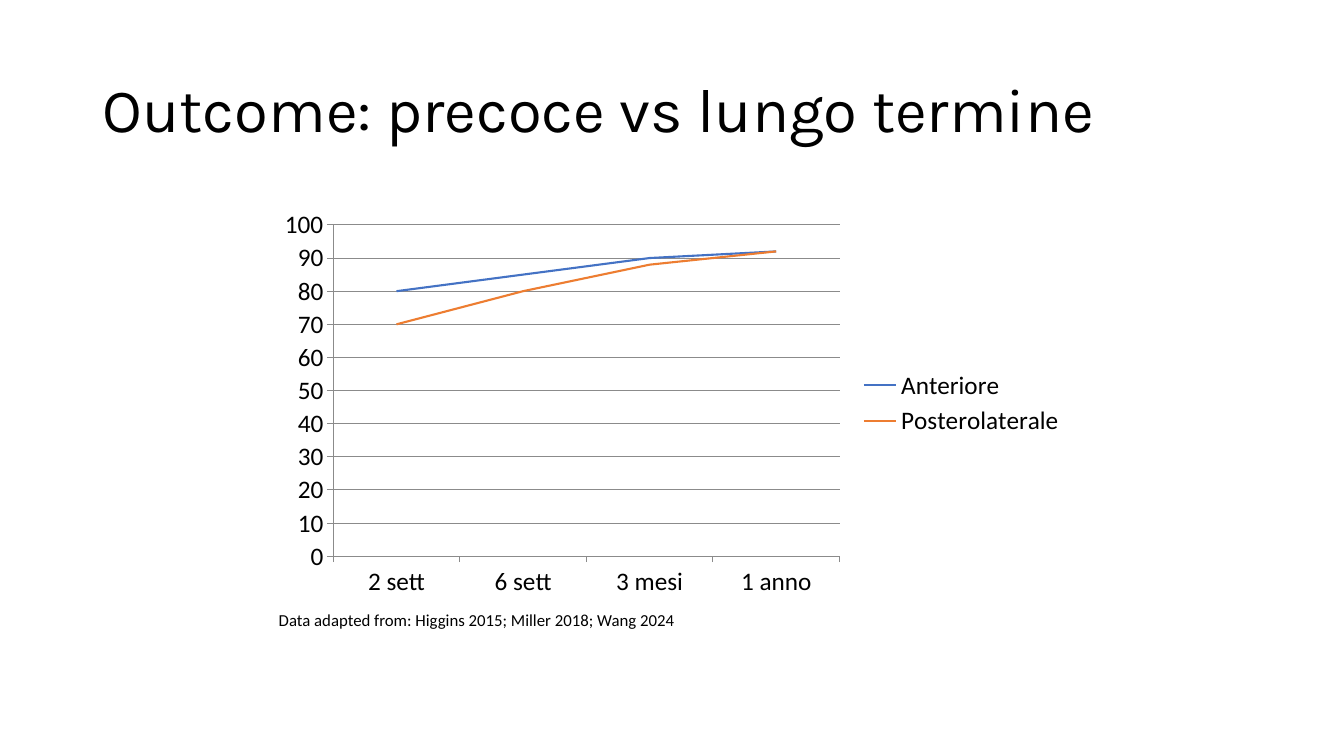
from pptx import Presentation
from pptx.chart.data import CategoryChartData
from pptx.dml.color import RGBColor
from pptx.enum.chart import XL_CHART_TYPE, XL_LEGEND_POSITION, XL_MARKER_STYLE, XL_TICK_MARK
from pptx.enum.text import MSO_ANCHOR, MSO_AUTO_SIZE, PP_ALIGN
from pptx.util import Inches, Pt

LINE_CHART = XL_CHART_TYPE.LINE
LEGEND_RIGHT = XL_LEGEND_POSITION.RIGHT
NO_MARKER = XL_MARKER_STYLE.NONE
TICK_OUTSIDE = XL_TICK_MARK.OUTSIDE
TICK_NONE = XL_TICK_MARK.NONE
MIDDLE = MSO_ANCHOR.MIDDLE
LEFT = PP_ALIGN.LEFT
FIT_SHAPE = MSO_AUTO_SIZE.SHAPE_TO_FIT_TEXT
NO_FIT = MSO_AUTO_SIZE.NONE

BLACK = RGBColor(0x00, 0x00, 0x00)
WHITE = RGBColor(0xFF, 0xFF, 0xFF)
GREY = RGBColor(0x8B, 0x8B, 0x8B)
BLUE = RGBColor(0x44, 0x72, 0xC4)
ORANGE = RGBColor(0xED, 0x7D, 0x31)

SLIDE_WIDTH, SLIDE_HEIGHT = Inches(13.33), Inches(7.5)

PERIODS = ("2 sett", "6 sett", "3 mesi", "1 anno")
APPROACHES = (
    ("Anteriore", (80, 85, 90, 92), BLUE),
    ("Posterolaterale", (70, 80, 88, 92), ORANGE),
)


def area(left, top, width, height):
    """Turn shares of the slide into lengths."""
    return (int(SLIDE_WIDTH * left), int(SLIDE_HEIGHT * top),
            int(SLIDE_WIDTH * width), int(SLIDE_HEIGHT * height))


def format_font(font, name, size):
    font.name = name
    font.size = Pt(size)
    font.bold = False
    font.color.rgb = BLACK


def write_text(frame, text, font_name, size, line_spacing=1.0):
    para = frame.paragraphs[0]
    para.alignment = LEFT
    para.line_spacing = line_spacing
    span = para.add_run()
    span.text = text
    format_font(span.font, font_name, size)


def set_title(page, text, place):
    title = page.shapes.title
    title.left, title.top, title.width, title.height = place
    frame = title.text_frame
    frame.word_wrap = True
    frame.auto_size = NO_FIT
    frame.vertical_anchor = MIDDLE
    write_text(frame, text, "Karla", 44, line_spacing=0.9)


def add_caption(page, text, place):
    frame = page.shapes.add_textbox(*place).text_frame
    frame.word_wrap = False
    frame.auto_size = FIT_SHAPE
    write_text(frame, text, "Calibri", 12)


def format_line(line, color, width):
    line.color.rgb = color
    line.width = Pt(width)


def add_outcome_chart(page, place):
    data = CategoryChartData()
    data.categories = PERIODS
    for name, scores, _ in APPROACHES:
        data.add_series(name, scores)
    chart = page.shapes.add_chart(LINE_CHART, *place, data).chart
    format_font(chart.font, "Calibri", 18)
    chart.has_title = False

    # Legend
    chart.has_legend = True
    chart.legend.position = LEGEND_RIGHT
    chart.legend.include_in_layout = False

    # Axes
    for axis in (chart.category_axis, chart.value_axis):
        axis.major_tick_mark = TICK_OUTSIDE
        axis.minor_tick_mark = TICK_NONE
        format_line(axis.format.line, GREY, 0.75)
    scale = chart.value_axis
    scale.minimum_scale, scale.maximum_scale, scale.major_unit = 0, 100, 10
    scale.has_major_gridlines = True
    format_line(scale.major_gridlines.format.line, GREY, 0.75)

    # Series
    plot = chart.plots[0]
    plot.vary_by_categories = False
    for series, (_, _, color) in zip(plot.series, APPROACHES):
        series.smooth = False
        series.marker.style = NO_MARKER
        format_line(series.format.line, color, 1.5)


def main():
    deck = Presentation()
    deck.slide_width, deck.slide_height = SLIDE_WIDTH, SLIDE_HEIGHT
    page = deck.slides.add_slide(deck.slide_layouts.get_by_name("Title Only"))
    page.background.fill.solid()
    page.background.fill.fore_color.rgb = WHITE

    set_title(page, "Outcome: precoce vs lungo termine",
              area(0.069, 0.053, 0.863, 0.193))
    add_outcome_chart(page, area(0.2, 4 / 15, 0.6, 8 / 15))
    add_caption(page, "Data adapted from: Higgins 2015; Miller 2018; Wang 2024",
                area(0.2, 0.8, 0.314, 0.04))

    deck.save("out.pptx")


if __name__ == "__main__":
    main()
